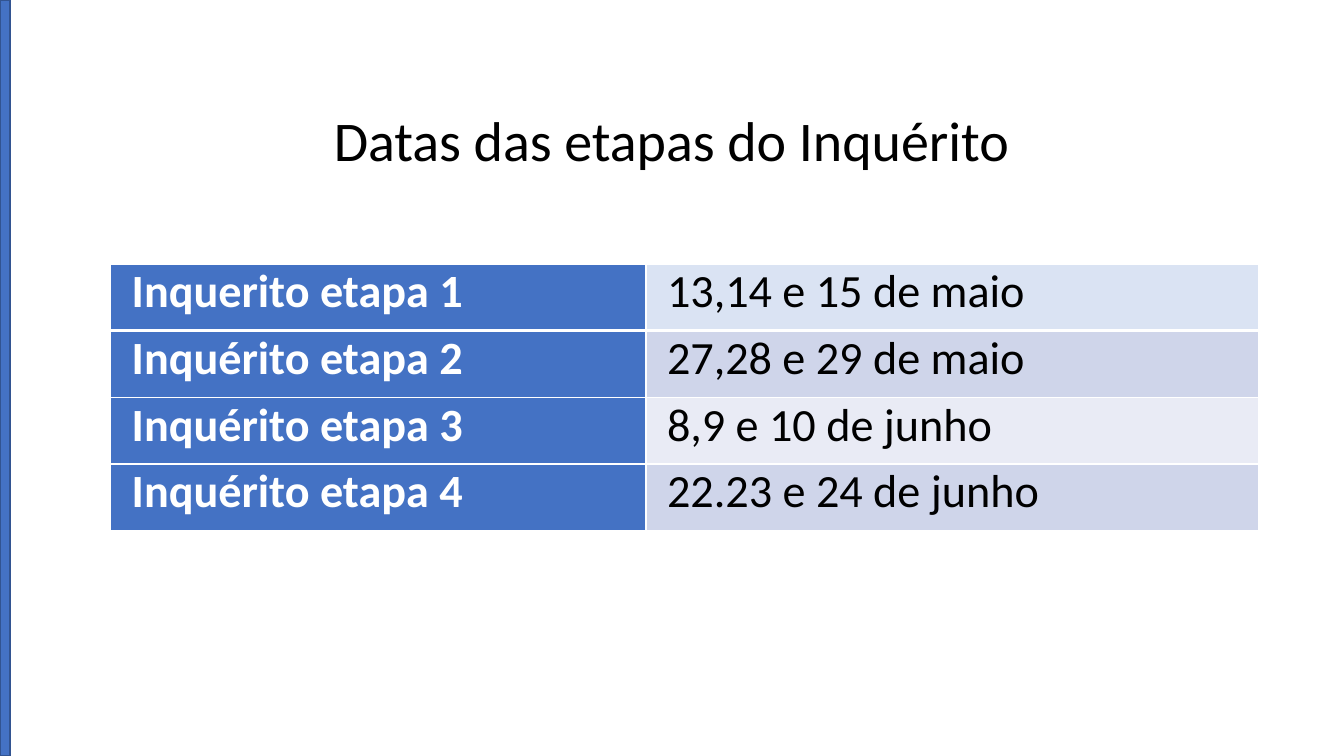
from lxml import etree
from pptx import Presentation
from pptx.dml.color import RGBColor
from pptx.enum.shapes import MSO_SHAPE
from pptx.enum.text import MSO_ANCHOR, PP_ALIGN
from pptx.oxml.ns import qn
from pptx.util import Cm, Pt

RECTANGLE = MSO_SHAPE.RECTANGLE
MIDDLE, TOP = MSO_ANCHOR.MIDDLE, MSO_ANCHOR.TOP
CENTER, LEFT = PP_ALIGN.CENTER, PP_ALIGN.LEFT
BLUE, WHITE, BLACK = "4472C4", "FFFFFF", "000000"


def color(hex_code):
    return RGBColor.from_string(hex_code)


def write(frame, text, size, hex_code, bold=False, align=LEFT, spacing=1.0):
    paragraph = frame.paragraphs[0]
    paragraph.alignment = align
    paragraph.line_spacing = spacing
    run = paragraph.add_run()
    run.text = text
    run.font.name = "Calibri"
    run.font.size = Pt(size)
    run.font.bold = bold
    run.font.color.rgb = color(hex_code)


prs = Presentation()
prs.slide_width, prs.slide_height = Cm(33.87), Cm(19.05)
slide = prs.slides.add_slide(prs.slide_layouts[6])

# Title
title = slide.shapes.add_textbox(Cm(2.79), Cm(2.06), Cm(28.27), Cm(3.1)).text_frame
title.word_wrap = True
title.vertical_anchor = MIDDLE
write(title, "Datas das etapas do Inquérito", 40, BLACK, align=CENTER, spacing=0.9)

# Survey stages and their dates
stages = [
    ("Inquerito etapa 1", "13,14 e 15 de maio", "DAE3F3"),
    ("Inquérito etapa 2", "27,28 e 29 de maio", "CFD5EA"),
    ("Inquérito etapa 3", "8,9 e 10 de junho", "E9EBF5"),
    ("Inquérito etapa 4", "22.23 e 24 de junho", "CFD5EA"),
]
schedule = slide.shapes.add_table(
    len(stages), 2, Cm(2.79), Cm(6.65), Cm(28.93), Cm(6.72)).table
schedule.columns[0].width = Cm(13.49)
schedule.columns[1].width = Cm(15.44)

for row, (stage, dates, dates_fill) in enumerate(stages):
    for column, (text, fill, ink) in enumerate(
            [(stage, BLUE, WHITE), (dates, dates_fill, BLACK)]):
        cell = schedule.cell(row, column)
        cell.margin_left = cell.margin_right = Cm(0.53)
        cell.margin_top = cell.margin_bottom = 0
        cell.vertical_anchor = TOP
        write(cell.text_frame, text, 33, ink, bold=column == 0)

        # White borders, thicker between the first and second rows
        properties = cell._tc.get_or_add_tcPr()
        for side in ("lnL", "lnR", "lnT", "lnB"):
            thick = (row, side) in ((0, "lnB"), (1, "lnT"))
            border = etree.SubElement(
                properties, qn(f"a:{side}"), w=str(Pt(3 if thick else 1)))
            paint = etree.SubElement(border, qn("a:solidFill"))
            etree.SubElement(paint, qn("a:srgbClr"), val=WHITE)
        cell.fill.solid()
        cell.fill.fore_color.rgb = color(fill)

# Left edge bar
edge_bar = slide.shapes.add_shape(RECTANGLE, 0, 0, Cm(0.25), prs.slide_height)
edge_bar.shadow.inherit = False
edge_bar.fill.solid()
edge_bar.fill.fore_color.rgb = color(BLUE)
edge_bar.line.color.rgb = color("325491")
edge_bar.line.width = Pt(1)

prs.save("out.pptx")
